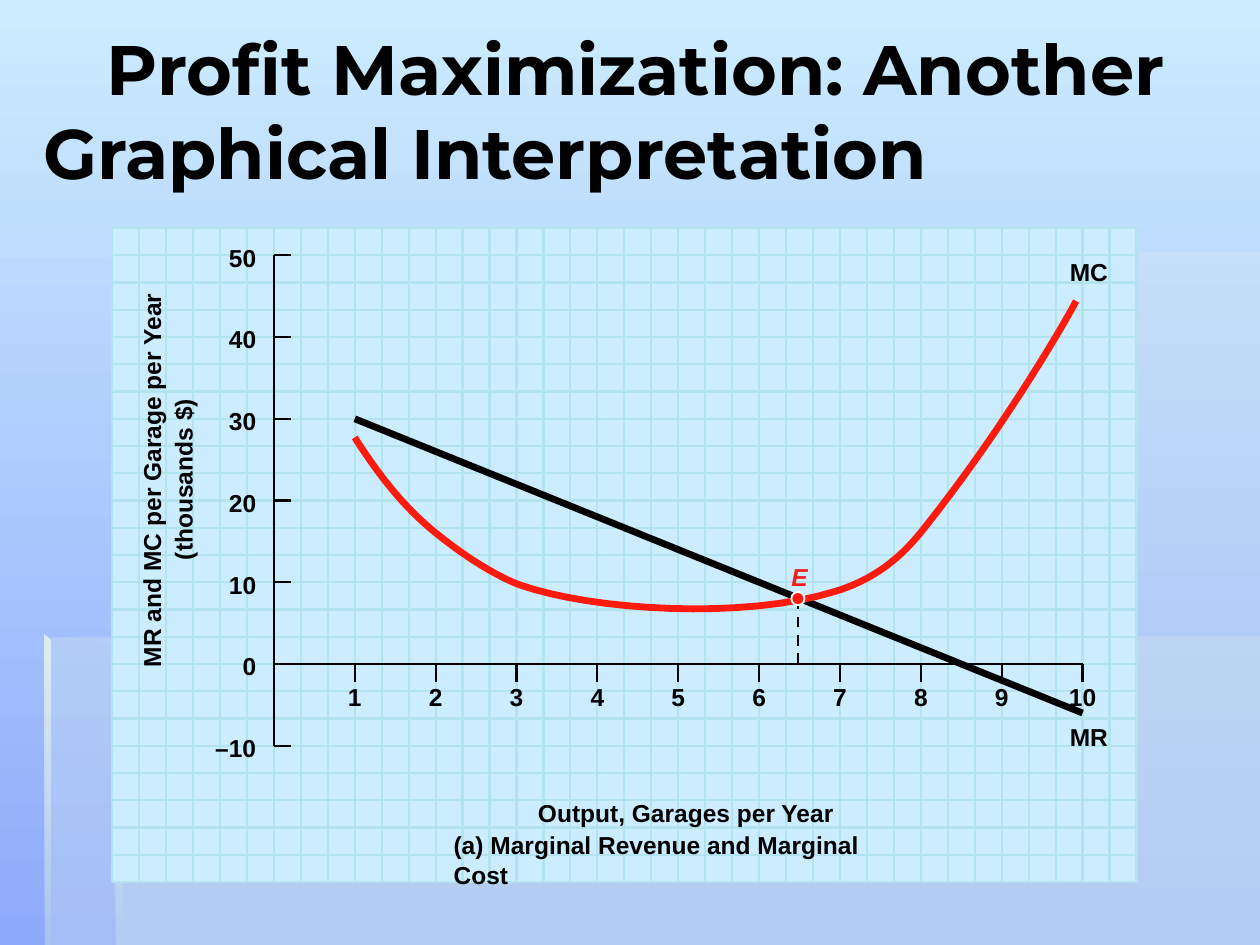
"""Build the slide on profit maximization with marginal revenue and marginal cost."""
from dataclasses import dataclass

from lxml import etree
from pptx import Presentation
from pptx.dml.color import RGBColor
from pptx.enum.dml import MSO_LINE
from pptx.enum.shapes import MSO_CONNECTOR, MSO_SHAPE
from pptx.enum.text import MSO_ANCHOR, PP_ALIGN
from pptx.oxml.ns import qn
from pptx.util import Inches, Pt

LEFT, CENTER, RIGHT = PP_ALIGN.LEFT, PP_ALIGN.CENTER, PP_ALIGN.RIGHT
MIDDLE = MSO_ANCHOR.MIDDLE
STRAIGHT = MSO_CONNECTOR.STRAIGHT
RECTANGLE, OVAL = MSO_SHAPE.RECTANGLE, MSO_SHAPE.OVAL
DASH = MSO_LINE.DASH

SLIDE_COLUMNS, SLIDE_ROWS = 10, 7.5
Point = tuple[float, float]


@dataclass(frozen=True)
class Theme:
    """Colours, fonts, type sizes and line weights."""
    sky: str = "CCECFF"
    dusk: str = "8EAAFA"
    pane: str = "D6EDEE"
    pane_light: str = "DCEFF0"
    pane_dark: str = "C4D9DA"
    grid: str = "B3E3EE"
    ink: str = "000000"
    white: str = "FFFFFF"
    cost: str = "FE1B0E"
    equilibrium: str = "FF1919"
    title_font: str = "Montserrat"
    label_font: str = "Arial"
    title_size: float = 40
    label_size: float = 14
    thin: float = 1.25
    dashed: float = 1.5
    thick: float = 3.88


@dataclass(frozen=True)
class Graph:
    """Squared paper with the axes placed on whole cells."""
    left: float = 0.89
    top: float = 1.81
    width: float = 8.13
    height: float = 5.19
    columns: int = 38
    rows: int = 24
    origin_column: int = 6
    origin_row: int = 16
    cells_per_step: int = 3

    def column(self, number: float) -> float:
        """Return the place of a paper column."""
        return self.left + number * self.width / self.columns

    def row(self, number: float) -> float:
        """Return the place of a paper row."""
        return self.top + number * self.height / self.rows

    def at(self, garages: float, thousands: float) -> Point:
        """Return the place of a data point."""
        return (self.column(self.origin_column + garages * self.cells_per_step),
                self.row(self.origin_row - thousands / 10 * self.cells_per_step))


@dataclass(frozen=True)
class Pane:
    """A translucent background pane; each stop is a colour and its opacity."""
    corners: tuple[Point, ...]
    stops: tuple[tuple[str, int], ...]
    angle: int = 270


@dataclass(frozen=True)
class Label:
    """A bold text with its place on the slide grid."""
    text: str
    left: float
    top: float
    width: float
    height: float = 0.29
    align: PP_ALIGN = LEFT
    color: str = Theme.ink
    rotation: int = 0
    italic: bool = False


THEME, GRAPH = Theme(), Graph()
VEIL = ((THEME.pane, 30),)
GLOW = ((THEME.pane_light, 100), (THEME.pane, 0))

PANES = (
    Pane(((0.92, 5.05), (0.92, 7.5), (10, 7.5), (10, 5.05)), VEIL),
    Pane(((0.94, 5.06), (0.36, 5.06), (0.36, 7.5), (10, 7.5), (10, 2), (0.94, 2)), VEIL),
    Pane(((0.91, 7.5), (0.97, 7.5), (0.96, 5.08), (0.91, 5.04)), GLOW),
    Pane(((0.35, 5.04), (0.35, 5.09), (5.35, 5.09), (5.35, 5.04)),
         ((THEME.pane, 0), (THEME.pane_dark, 100)), 0),
    Pane(((0.35, 5.04), (0.35, 7.5), (0.4, 7.5), (0.4, 5.09)),
         ((THEME.pane_light, 100), (THEME.pane, 10))),
)
LABELS = (
    Label("Output, Garages per Year", 4.27, 6.33, 2.4),
    Label("(a) Marginal Revenue and Marginal Cost", 3.6, 6.59, 3.69),
    Label("MR and MC per Garage per Year", -0.31, 3.67, 3.02, 0.23, rotation=270),
    Label("(thousands $)", 0.79, 3.67, 1.32, 0.23, rotation=270),
    Label("MR", 8.49, 5.73, 0.45),
    Label("MC", 8.49, 2.04, 0.45),
    Label("E", 6.28, 4.46, 0.18, 0.23, color=THEME.equilibrium, italic=True),
)
EQUILIBRIUM = (6.48, 8)
REVENUE = ((1, 30), (10, -6))
COST_KNOTS = (
    (1, 27.7), (1.31, 22.96), (1.59, 19.4), (1.98, 16.2),
    (2.44, 12.5), (2.8, 10.6), (3.03, 9.7),
    (3.95, 6.5), (5.82, 5.4), (6.95, 8.9),
    (7.31, 10), (7.67, 12), (8.01, 16.2),
    (9.08, 29.4), (9.88, 43.5), (9.92, 44.4),
)


def rgb(color: str) -> RGBColor:
    return RGBColor.from_string(color)


def shade(fill, colors: list[str], angle: int) -> None:
    """Fill with one colour or with a gradient of two."""
    if len(colors) == 1:
        fill.solid()
        fill.fore_color.rgb = rgb(colors[0])
        return
    fill.gradient()
    fill.gradient_angle = angle
    for stop, color in zip(fill.gradient_stops, colors):
        stop.color.rgb = rgb(color)


def stroke(line, color: str, weight: float) -> None:
    line.color.rgb = rgb(color)
    line.width = Pt(weight)


def draw_path(slide, points: list[Point], close: bool):
    """Draw an outline through points of the slide grid."""
    places = [(Inches(x), Inches(y)) for x, y in points]
    builder = slide.shapes.build_freeform(*places[0], scale=1.0)
    builder.add_line_segments(places[1:], close=close)
    path = builder.convert_to_shape()
    path.shadow.inherit = False
    return path


def draw_pane(slide, pane: Pane) -> None:
    surface = draw_path(slide, list(pane.corners), True)
    surface.line.fill.background()
    shade(surface.fill, [color for color, _ in pane.stops], pane.angle)
    for tint, (_, opacity) in zip(surface._element.spPr.iter(qn("a:srgbClr")), pane.stops):
        etree.SubElement(tint, qn("a:alpha")).set("val", str(opacity * 1000))


def draw_line(slide, start: Point, end: Point, color: str = THEME.ink,
              weight: float = THEME.thin):
    rule = slide.shapes.add_connector(STRAIGHT, *map(Inches, (*start, *end)))
    stroke(rule.line, color, weight)
    etree.SubElement(rule._element.spPr, qn("a:effectLst"))
    return rule


def draw_shape(slide, kind: MSO_SHAPE, box: tuple[float, ...], fill: str,
               outline: str | None = None) -> None:
    figure = slide.shapes.add_shape(kind, *map(Inches, box))
    figure.shadow.inherit = False
    shade(figure.fill, [fill], 0)
    if outline:
        stroke(figure.line, outline, THEME.thin)
    else:
        figure.line.fill.background()


def draw_label(slide, label: Label, font: str = THEME.label_font,
               size: float = THEME.label_size, margins: Point = (0, 0)):
    """Write one label and return its text frame."""
    box = slide.shapes.add_textbox(
        *map(Inches, (label.left, label.top, label.width, label.height)))
    box.rotation = label.rotation
    frame = box.text_frame
    frame.word_wrap = True
    frame.margin_left = frame.margin_right = Inches(margins[0])
    frame.margin_top = frame.margin_bottom = Inches(margins[1])
    paragraph = frame.paragraphs[0]
    paragraph.text, paragraph.alignment = label.text, label.align
    paragraph.font.name, paragraph.font.size = font, Pt(size)
    paragraph.font.bold, paragraph.font.italic = True, label.italic
    paragraph.font.color.rgb = rgb(label.color)
    return frame


def draw_title(slide) -> None:
    title = Label("Profit Maximization: Another Graphical Interpretation",
                  0.25, 0.24, 9.58, 1.25)
    frame = draw_label(slide, title, THEME.title_font, THEME.title_size, (0.1, 0.05))
    frame.vertical_anchor = MIDDLE
    frame.paragraphs[0]._p.get_or_add_pPr().set("indent", str(Inches(0.5)))


def draw_paper(slide) -> None:
    right, bottom = GRAPH.column(GRAPH.columns), GRAPH.row(GRAPH.rows)
    draw_shape(slide, RECTANGLE, (GRAPH.left, GRAPH.top, GRAPH.width, GRAPH.height),
               THEME.sky, THEME.grid)
    for y in map(GRAPH.row, range(1, GRAPH.rows)):
        draw_line(slide, (GRAPH.left, y), (right, y), THEME.grid)
    for x in map(GRAPH.column, range(1, GRAPH.columns)):
        draw_line(slide, (x, GRAPH.top), (x, bottom), THEME.grid)


def draw_axes(slide, tick: float = 0.14) -> None:
    draw_line(slide, GRAPH.at(0, -10), GRAPH.at(0, 50))
    draw_line(slide, GRAPH.at(0, 0), GRAPH.at(10, 0))
    for thousands in range(-10, 51, 10):
        x, y = GRAPH.at(0, thousands)
        if thousands:
            draw_line(slide, (x, y), (x + tick, y))
        draw_label(slide, Label(str(thousands).replace("-", "–"),
                                x - 0.57, y - 0.1, 0.43, align=RIGHT))
    for garages in range(1, 11):
        x, y = GRAPH.at(garages, 0)
        draw_line(slide, (x, y), (x, y + tick))
        draw_label(slide, Label(str(garages), x - 0.17, y + tick, 0.34, align=CENTER))


def cost_points(steps: int = 16) -> list[Point]:
    """Sample the cubic spans of the marginal cost curve."""
    points = [GRAPH.at(*COST_KNOTS[0])]
    for first in range(0, len(COST_KNOTS) - 1, 3):
        span = COST_KNOTS[first:first + 4]
        for t in (step / steps for step in range(1, steps + 1)):
            weights = ((1 - t) ** 3, 3 * t * (1 - t) ** 2, 3 * t * t * (1 - t), t ** 3)
            points.append(GRAPH.at(*(sum(w * knot[axis] for w, knot in zip(weights, span))
                                     for axis in (0, 1))))
    return points


def draw_curves(slide) -> None:
    draw_line(slide, *(GRAPH.at(*end) for end in REVENUE), weight=THEME.thick)
    cost = draw_path(slide, cost_points(), False)
    cost.fill.background()
    stroke(cost.line, THEME.cost, THEME.thick)
    x, y = GRAPH.at(*EQUILIBRIUM)
    drop = draw_line(slide, GRAPH.at(EQUILIBRIUM[0], 0), (x, y + 0.04), weight=THEME.dashed)
    drop.line.dash_style = DASH
    for size, fill, outline in ((0.12, THEME.white, None), (0.07, THEME.cost, THEME.cost)):
        draw_shape(slide, OVAL, (x - size / 2, y - size / 2, size, size), fill, outline)


def main() -> None:
    deck = Presentation()
    deck.slide_width, deck.slide_height = Inches(SLIDE_COLUMNS), Inches(SLIDE_ROWS)
    slide = deck.slides.add_slide(deck.slide_layouts[6])
    shade(slide.background.fill, [THEME.sky, THEME.dusk], 270)
    for pane in PANES:
        draw_pane(slide, pane)
    draw_title(slide)
    draw_paper(slide)
    draw_axes(slide)
    draw_curves(slide)
    for label in LABELS:
        draw_label(slide, label)
    deck.save("out.pptx")


if __name__ == "__main__":
    main()
